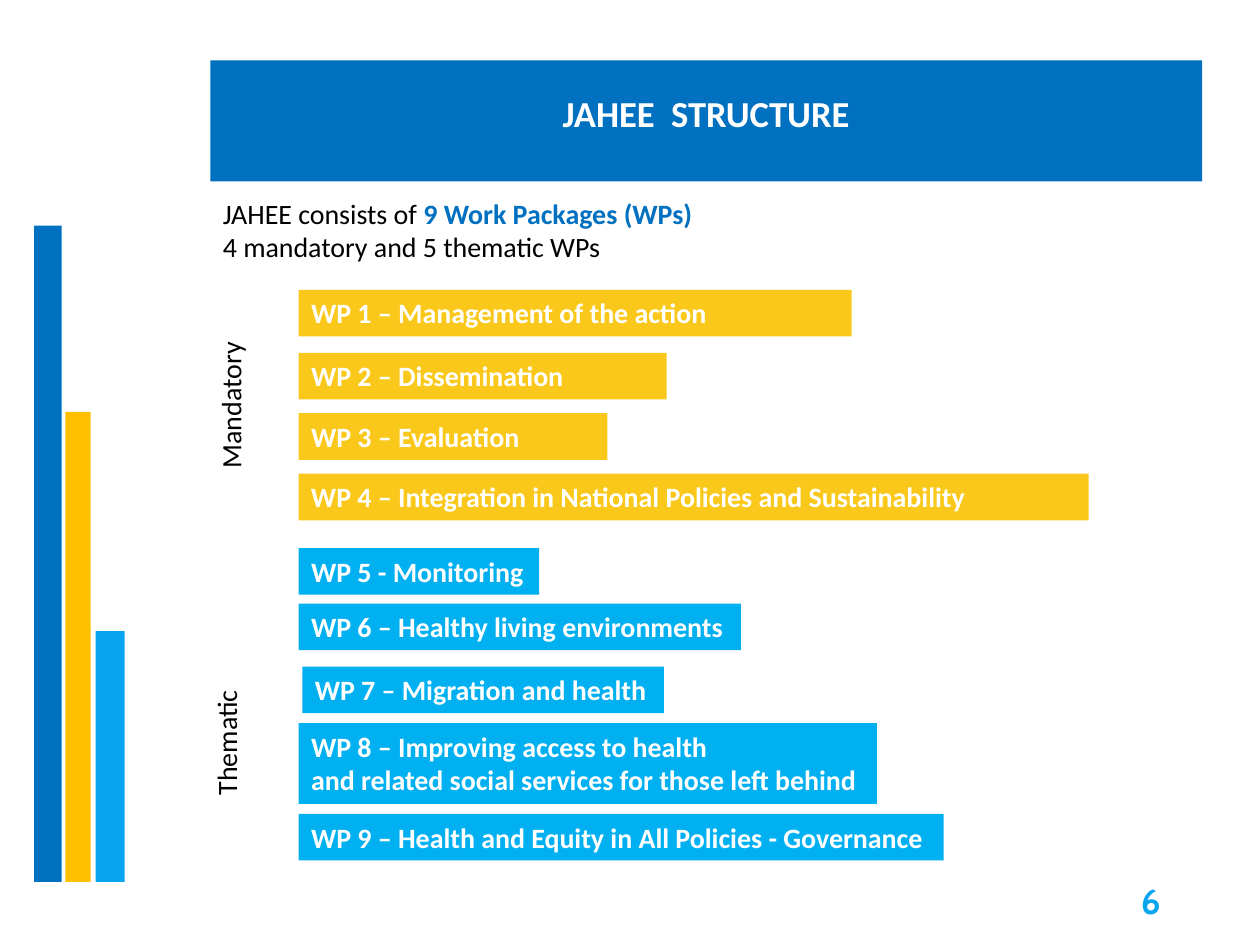
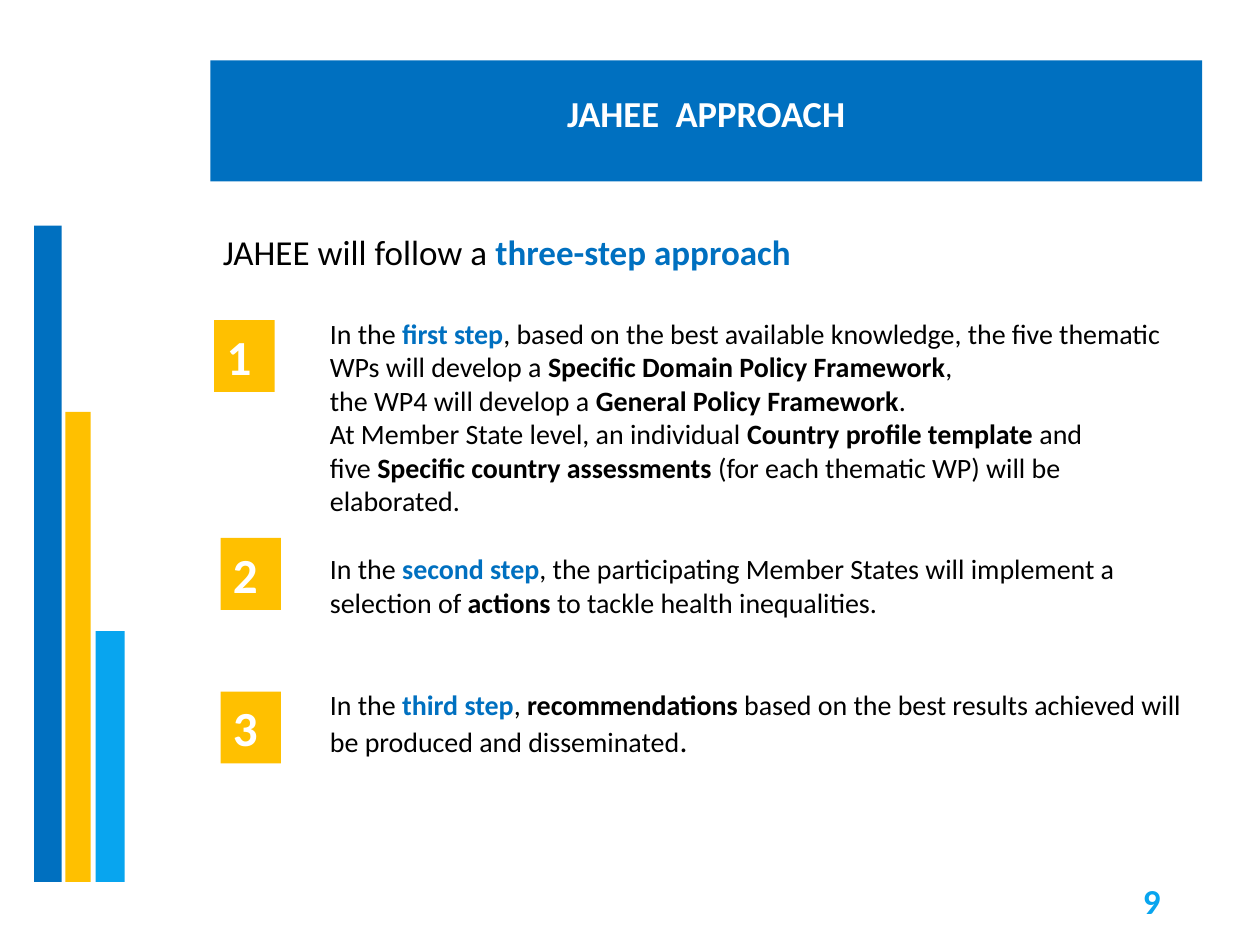
from pptx import Presentation
from pptx.dml.color import RGBColor
from pptx.enum import shapes, text
from pptx.util import Inches, Pt

COLORS = {
    "blue": "0070C0", "amber": "FFC000", "sky": "08A5EF",
    "mandatory": "FAC81A", "thematic": "00B0F0",
    "black": "000000", "white": "FFFFFF",
}
FONT = "Calibri"
BODY_LINE = 19.5  # height in points of one 16 pt line

# left, top, width, colour; all end on the same base line
SIDE_BARS = [(0.76, 5.01, 0.23, "sky"), (0.52, 3.27, 0.2, "amber"),
             (0.27, 1.79, 0.22, "blue")]
SIDE_BASE = 7.0

# left, top, width, lines
MANDATORY = [
    (2.37, 2.3, 4.39, ["WP 1 – Management of the action"]),
    (2.37, 2.8, 2.92, ["WP 2 – Dissemination"]),
    (2.37, 3.28, 2.45, ["WP 3 – Evaluation"]),
    (2.37, 3.76, 6.27,
     ["WP 4 – Integration in National Policies and Sustainability"]),
]
THEMATIC = [
    (2.37, 4.35, 1.91, ["WP 5 - Monitoring"]),
    (2.37, 4.79, 3.51, ["WP 6 – Healthy living environments"]),
    (2.4, 5.29, 2.87, ["WP 7 – Migration and health"]),
    (2.37, 5.74, 4.59, ["WP 8 – Improving access to health",
                        "and related social services for those left behind"]),
    (2.37, 6.46, 5.12,
     ["WP 9 – Health and Equity in All Policies - Governance"]),
]

# Each paragraph: blank lines' worth of space before it, then its runs.
# "*" marks a bold run, "!" a bold blue one.
STEPS = [
    (0, ["In the", "! first step",
         ", based on the best available knowledge, the five thematic WPs "
         "will develop a ", "*Specific Domain Policy Framework", ","]),
    (0, ["the WP4 will develop a ", "*General Policy Framework", "."]),
    (0, ["At Member State level, an individual ",
         "*Country profile template ", "and"]),
    (0, ["five ", "*Specific country assessments ",
         "(for each thematic WP) will be elaborated."]),
    (1, ["In the ", "!second step",
         ", the participating Member States will implement a selection of ",
         "*actions", " to tackle health inequalities."]),
    (2, ["In the ", "!third step", ", ", "*recommendations",
         " based on the best results achieved will be produced and "
         "disseminated", "."]),
]
STEP_BADGES = [("1", 1.7, 2.54), ("2", 1.75, 4.27), ("3", 1.75, 5.49)]


def rgb(name):
    return RGBColor.from_string(COLORS[name])


def style(r, size, color="black", bold=False, font=FONT):
    r.font.name, r.font.size, r.font.bold = font, Pt(size), bold
    r.font.color.rgb = rgb(color)


def add_rect(parent, left, top, width, height, color):
    sp = parent.add_shape(shapes.MSO_SHAPE.RECTANGLE, Inches(left),
                          Inches(top), Inches(width), Inches(height))
    sp.shadow.inherit = False
    sp.fill.solid()
    sp.fill.fore_color.rgb = rgb(color)
    sp.line.fill.background()
    return sp


def add_label_box(slide, left, top, width, height, color, lines, size):
    """Filled box with bold white text, set from its top left corner."""
    sp = add_rect(slide.shapes, left, top, width, height, color)
    tf = sp.text_frame
    tf.word_wrap = False
    tf.vertical_anchor = text.MSO_ANCHOR.TOP
    tf.text = "\n".join(lines)
    for p in tf.paragraphs:
        p.alignment = text.PP_ALIGN.LEFT
        style(p.runs[0], size, "white", True)


def add_text(slide, left, top, width, height, paragraphs, size):
    """Text box of (blank lines before, marked runs) paragraphs."""
    box = slide.shapes.add_textbox(Inches(left), Inches(top),
                                   Inches(width), Inches(height))
    tf = box.text_frame
    tf.word_wrap = True
    for i, (gap, runs) in enumerate(paragraphs):
        p = tf.add_paragraph() if i else tf.paragraphs[0]
        if gap:
            p.space_before = Pt(gap * BODY_LINE)
        for marked in runs:
            r = p.add_run()
            r.text = marked.lstrip("*!")
            style(r, size, "blue" if marked[0] == "!" else "black",
                  marked[0] in "*!")
    return box


def add_title(slide, title):
    sp = slide.shapes.title
    sp.left, sp.top = Inches(1.67), Inches(0.48)
    sp.width, sp.height = Inches(7.87), Inches(0.96)
    sp.fill.solid()
    sp.fill.fore_color.rgb = rgb("blue")
    tf = sp.text_frame
    tf.auto_size = text.MSO_AUTO_SIZE.NONE
    tf.vertical_anchor = text.MSO_ANCHOR.MIDDLE
    tf.text = title
    p = tf.paragraphs[0]
    p.alignment = text.PP_ALIGN.CENTER
    r = p.runs[0]
    style(r, 36, "white", True)
    r._r.get_or_add_rPr().set("baseline", "30000")  # raised, reduced text


def add_page_number(slide, number, font):
    box = add_text(slide, 7.06, 6.95, 2.25, 0.4, [(0, [number])], 20)
    box.text_frame.vertical_anchor = text.MSO_ANCHOR.MIDDLE
    p = box.text_frame.paragraphs[0]
    p.alignment = text.PP_ALIGN.RIGHT
    style(p.runs[0], 20, "sky", True, font)


def add_slide(prs, title, number, number_font=FONT):
    """Slide with the shared title band, side bars and page number."""
    slide = prs.slides.add_slide(prs.slide_layouts[5])
    add_title(slide, title)
    side = slide.shapes.add_group_shape()
    for left, top, width, color in SIDE_BARS:
        add_rect(side.shapes, left, top, width, SIDE_BASE - top, color)
    add_page_number(slide, number, number_font)
    return slide


def build_structure(prs):
    slide = add_slide(prs, "JAHEE  STRUCTURE", "6", "Cabin")
    add_text(slide, 1.67, 1.51, 7.72, 0.64,
             [(0, ["JAHEE consists of ", "!9 Work Packages (WPs)"]),
              (0, ["4 mandatory and 5 thematic WPs"])], 16)
    for color, packages in (("mandatory", MANDATORY), ("thematic", THEMATIC)):
        for left, top, width, lines in packages:
            height = 0.1 + 0.27 * len(lines)
            add_label_box(slide, left, top, width, height, color, lines, 16)
    for name, top, width in (("Mandatory", 3, 1.26), ("Thematic", 5.63, 1.19)):
        add_text(slide, 1.2, top, width, 0.37, [(0, [name])], 16).rotation = 270


def build_approach(prs):
    slide = add_slide(prs, "JAHEE  APPROACH", "9")
    add_text(slide, 1.67, 1.78, 5.63, 0.44,
             [(0, ["JAHEE will follow a ", "!three-step approach"])], 20)
    steps = add_text(slide, 2.52, 2.46, 7.01, 3.64, STEPS, 16)
    steps.text_frame.paragraphs[-1].runs[-1].font.size = Pt(18)
    for number, left, top in STEP_BADGES:
        add_label_box(slide, left, top, 0.48, 0.57, "amber", [number], 28)


def main():
    prs = Presentation()
    prs.slide_width, prs.slide_height = Inches(10), Inches(7.5)
    build_structure(prs)
    build_approach(prs)
    prs.save("out.pptx")


if __name__ == "__main__":
    main()
